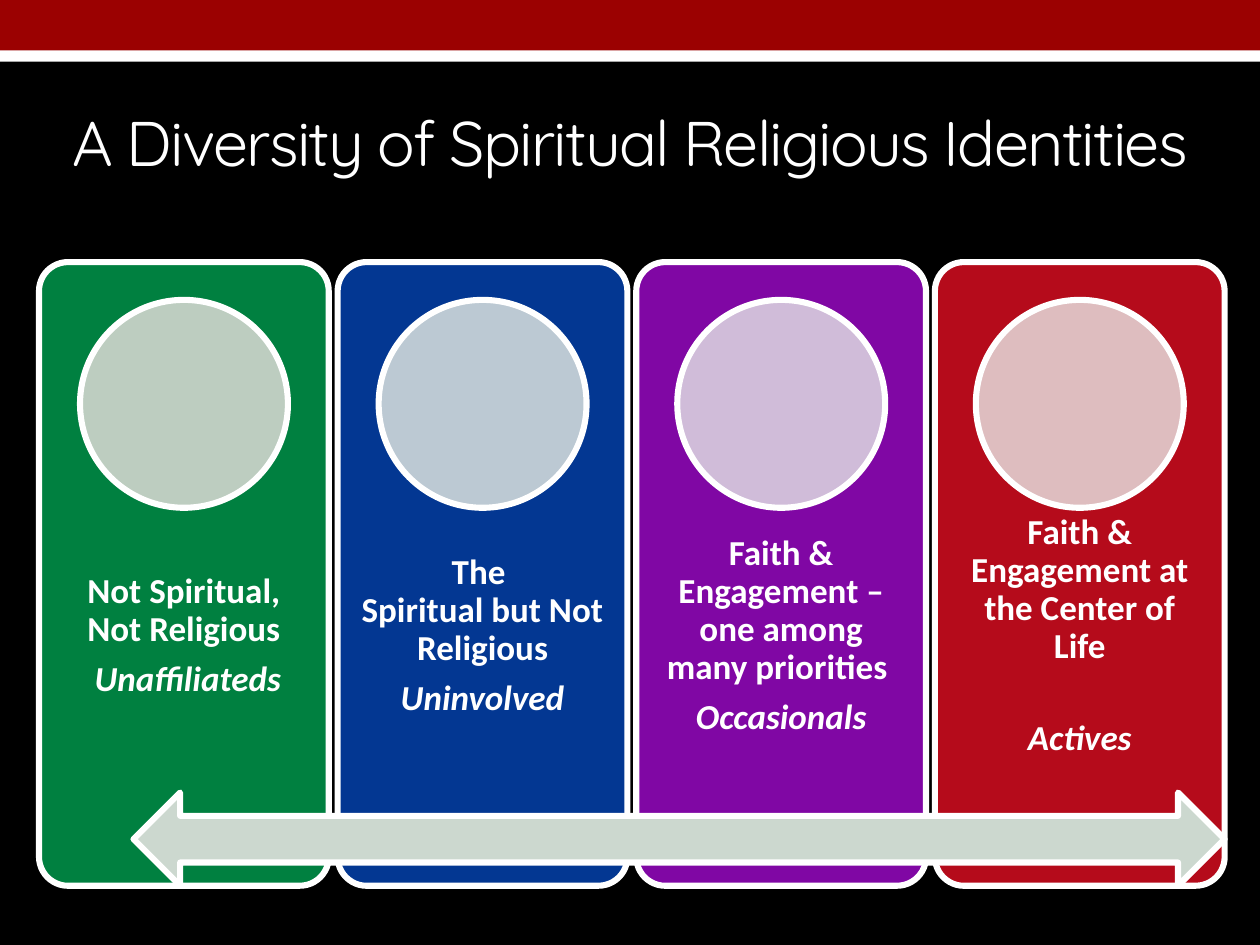
"""Build a slide that sets four spiritual and religious identities along one arrow."""
from dataclasses import dataclass

from pptx import Presentation
from pptx.dml.color import RGBColor
from pptx.enum.shapes import MSO_SHAPE as Preset
from pptx.enum.text import MSO_ANCHOR as Anchor, PP_ALIGN as Align
from pptx.util import Inches, Pt


@dataclass(frozen=True)
class Theme:
    background: str = "000000"
    white: str = "FFFFFF"
    banner: str = "9B0101"
    arrow: str = "CCD8CF"
    title_font: str = "Quicksand"
    body_font: str = "Calibri"
    title_size: float = 36
    body_size: float = 20
    outline: float = 3.5
    paragraph_gap: float = 7
    wide_gap: float = 31


theme = Theme()
WIDTH, HEIGHT = 10, 7.5
LEFT, TOP, PITCH = 0.31, 2.08, 2.37
CARD_WIDTH, CARD_HEIGHT = 2.3, 4.95
CIRCLE = CARD_HEIGHT / 3
ARROW_LEFT, ARROW_HEIGHT = 1.06, 0.74
LABEL_HEIGHT = CARD_HEIGHT * 0.4
INSET = 0.16

identities = [
    ("008040", "BDCDC0", ["Not Spiritual, Not Religious"], " Unaffiliateds", theme.paragraph_gap),
    ("033792", "BCC9D3", ["The ", "Spiritual but Not Religious"], "Uninvolved", theme.paragraph_gap),
    ("8007A4", "D0BCD9", ["Faith & Engagement – one among many priorities "], "Occasionals", theme.paragraph_gap),
    ("B50B1B", "DEBDBF", ["Faith & Engagement at the Center of Life"], "Actives", theme.wide_gap),
]

presentation = Presentation()
presentation.slide_width, presentation.slide_height = Inches(WIDTH), Inches(HEIGHT)
slide = presentation.slides.add_slide(presentation.slide_layouts[6])
slide.background.fill.solid()
slide.background.fill.fore_color.rgb = RGBColor.from_string(theme.background)


def add_preset(preset, left, top, width, height, fill, outlined=True):
    shape = slide.shapes.add_shape(preset, *map(Inches, (left, top, width, height)))
    shape.shadow.inherit = False
    shape.fill.solid()
    shape.fill.fore_color.rgb = RGBColor.from_string(fill)
    if outlined:
        shape.line.color.rgb = RGBColor.from_string(theme.white)
        shape.line.width = Pt(theme.outline)
    else:
        shape.line.fill.background()
    return shape


def add_text(paragraph, text, font, size, **style):
    run = paragraph.add_run()
    run.text = text
    run.font.name, run.font.size = font, Pt(size)
    run.font.color.rgb = RGBColor.from_string(theme.white)
    for name, value in style.items():
        setattr(run.font, name, value)
    return run


add_preset(Preset.RECTANGLE, 0, 0.24, WIDTH, 0.25, theme.white, outlined=False)
add_preset(Preset.RECTANGLE, 0, 0, WIDTH, 0.4, theme.banner, outlined=False)

title = slide.shapes.add_textbox(0, Inches(0.58), Inches(WIDTH), Inches(1.08)).text_frame
title.word_wrap = True
title.vertical_anchor = Anchor.MIDDLE
title.paragraphs[0].alignment = Align.CENTER
title_run = add_text(title.paragraphs[0], "A Diversity of Spiritual Religious Identities",
                     theme.title_font, theme.title_size)
title_run.font._element.set("spc", "-100")

for column, (card_fill, circle_fill, lines, group, gap) in enumerate(identities):
    left = LEFT + column * PITCH
    card = add_preset(Preset.ROUNDED_RECTANGLE, left, TOP, CARD_WIDTH, CARD_HEIGHT, card_fill)
    card.adjustments[0] = 0.1

    label = slide.shapes.add_textbox(Inches(left), Inches(TOP + LABEL_HEIGHT),
                                     Inches(CARD_WIDTH), Inches(LABEL_HEIGHT)).text_frame
    label.word_wrap = True
    label.vertical_anchor = Anchor.MIDDLE
    label.margin_left = label.margin_right = Inches(INSET)
    label.margin_top = label.margin_bottom = Inches(INSET)
    heading, members = label.paragraphs[0], label.add_paragraph()
    for paragraph, space in ((heading, gap), (members, theme.paragraph_gap)):
        paragraph.alignment = Align.CENTER
        paragraph.line_spacing = 0.9
        paragraph.space_after = Pt(space)
    for index, line in enumerate(lines):
        if index:
            heading.add_line_break()
        add_text(heading, line, theme.body_font, theme.body_size, bold=True)
    add_text(members, group, theme.body_font, theme.body_size, bold=True, italic=True)

    add_preset(Preset.OVAL, left + (CARD_WIDTH - CIRCLE) / 2, TOP + 0.3, CIRCLE, CIRCLE, circle_fill)

right = LEFT + (len(identities) - 1) * PITCH + CARD_WIDTH
add_preset(Preset.LEFT_RIGHT_ARROW, ARROW_LEFT, TOP + CARD_HEIGHT - ARROW_HEIGHT,
           right - ARROW_LEFT, ARROW_HEIGHT, theme.arrow)

presentation.save("out.pptx")
